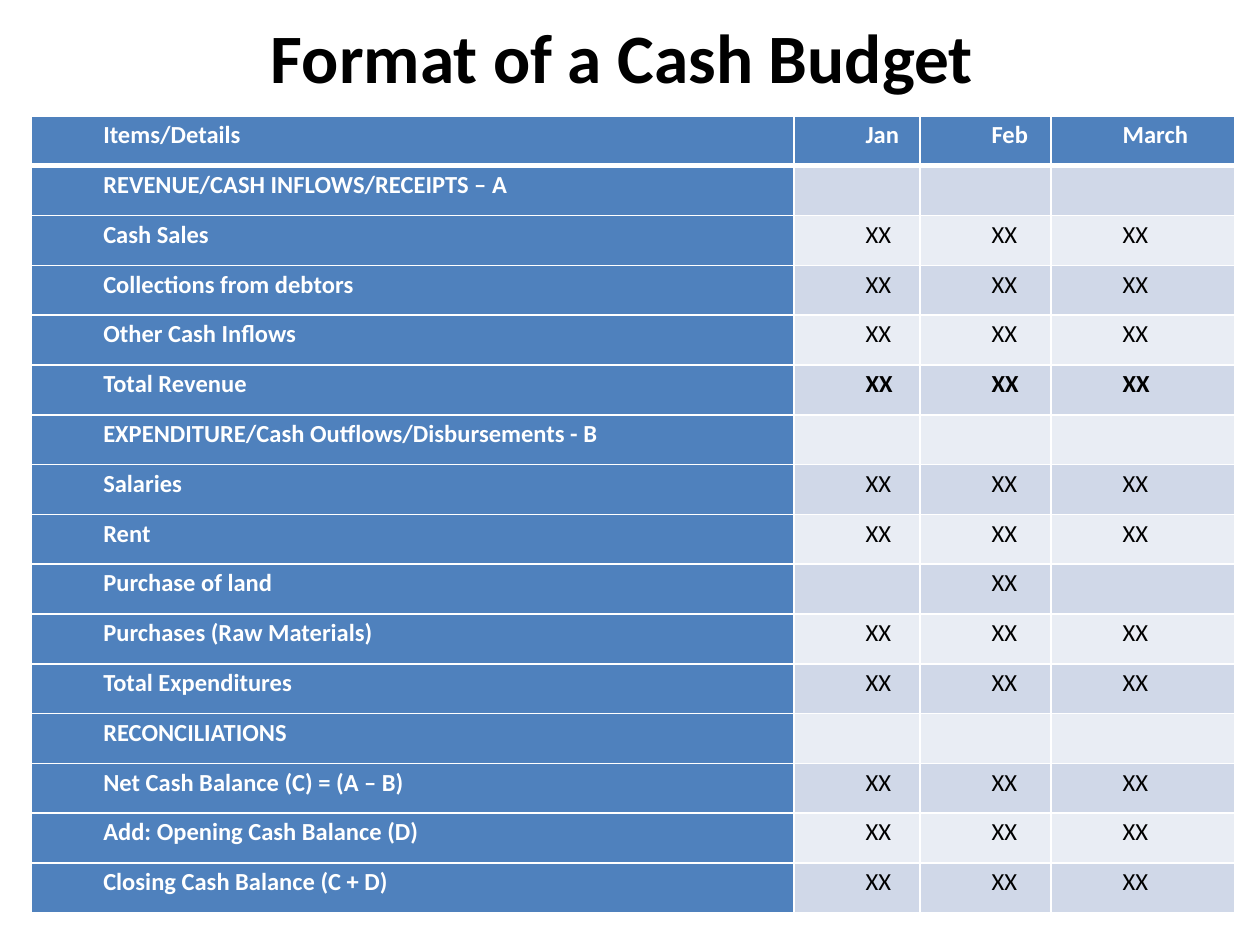
from lxml.etree import SubElement
from pptx import Presentation
from pptx.dml.color import RGBColor
from pptx.enum.text import MSO_ANCHOR, MSO_AUTO_SIZE, PP_ALIGN
from pptx.oxml.ns import qn
from pptx.util import Inches, Pt

TITLE = "Format of a Cash Budget "
HEADER = ("Items/Details", "Jan", "Feb", "March")
EMPTY = ("", "", "")
FILLED = ("XX", "XX", "XX")
ITEMS = [
    ("REVENUE/CASH INFLOWS/RECEIPTS – A", EMPTY),
    ("Cash Sales", FILLED),
    ("Collections from debtors", FILLED),
    ("Other Cash Inflows", FILLED),
    ("Total Revenue", FILLED),
    ("EXPENDITURE/Cash Outflows/Disbursements - B", EMPTY),
    ("Salaries", FILLED),
    ("Rent", FILLED),
    ("Purchase of land", ("", "XX", "")),
    ("Purchases (Raw Materials)", FILLED),
    ("Total Expenditures", FILLED),
    ("RECONCILIATIONS", EMPTY),
    ("Net Cash Balance (C) = (A – B)", FILLED),
    ("Add: Opening Cash Balance (D)", FILLED),
    ("Closing Cash Balance (C + D)", FILLED),
]
BOLD_ITEM = "Total Revenue"
COLORS = {
    "heading": "4F81BD",
    "dark_band": "D0D8E8",
    "light_band": "E9EDF4",
    "white": "FFFFFF",
    "black": "000000",
}
FONT = "Calibri"
COLUMN_WIDTHS = (6.05, 1, 1.04, 1.46)
TABLE_HEIGHT = 6.33


def color(name):
    return RGBColor.from_string(COLORS[name])


def set_font(paragraph, size, color_name, bold):
    font = paragraph.font
    font.name = FONT
    font.size = Pt(size)
    font.bold = bold
    font.color.rgb = color(color_name)


def add_borders(cell, top, bottom):
    properties = cell._tc.get_or_add_tcPr()
    for side, width in (("L", 1), ("R", 1), ("T", top), ("B", bottom)):
        line = SubElement(properties, qn(f"a:ln{side}"), w=str(Pt(width)))
        fill = SubElement(line, qn("a:solidFill"))
        SubElement(fill, qn("a:srgbClr"), val=COLORS["white"])


def fill_cell(cell, text, row, is_heading, bold):
    add_borders(cell, 3 if row == 1 else 1, 3 if row == 0 else 1)
    band = "dark_band" if row % 2 else "light_band"
    cell.fill.solid()
    cell.fill.fore_color.rgb = color("heading" if is_heading else band)
    cell.margin_left = cell.margin_right = Inches(0.07)
    cell.margin_top = cell.margin_bottom = 0
    cell.text = text
    paragraph = cell.text_frame.paragraphs[0]
    paragraph.line_spacing = 1.15
    paragraph._p.get_or_add_pPr().set("marL", str(Inches(0.5)))
    set_font(paragraph, 14, "white" if is_heading else "black", bold)


def add_title(slide):
    title = slide.shapes.title
    title.left, title.top = Inches(0.5), Inches(0.13)
    title.width, title.height = Inches(9), Inches(0.62)
    frame = title.text_frame
    frame.text = TITLE
    frame.auto_size = MSO_AUTO_SIZE.NONE
    frame.vertical_anchor = MSO_ANCHOR.MIDDLE
    paragraph = frame.paragraphs[0]
    paragraph.alignment = PP_ALIGN.CENTER
    set_font(paragraph, 39.6, "black", True)


def add_budget(slide):
    rows = [HEADER] + [(item, *values) for item, values in ITEMS]
    table = slide.shapes.add_table(
        len(rows), len(HEADER), Inches(0.25), Inches(0.92),
        Inches(sum(COLUMN_WIDTHS)), Inches(TABLE_HEIGHT),
    ).table
    table.first_col = True
    for column, width in zip(table.columns, COLUMN_WIDTHS):
        column.width = Inches(width)
    for row, texts in enumerate(rows):
        table.rows[row].height = Inches(TABLE_HEIGHT / len(rows))
        for column, text in enumerate(texts):
            is_heading = row == 0 or column == 0
            bold = is_heading or texts[0] == BOLD_ITEM
            fill_cell(table.cell(row, column), text, row, is_heading, bold)


def main():
    presentation = Presentation()
    presentation.slide_width = Inches(10)
    presentation.slide_height = Inches(7.5)
    slide = presentation.slides.add_slide(presentation.slide_layouts[5])
    add_title(slide)
    add_budget(slide)
    presentation.save("out.pptx")


if __name__ == "__main__":
    main()
